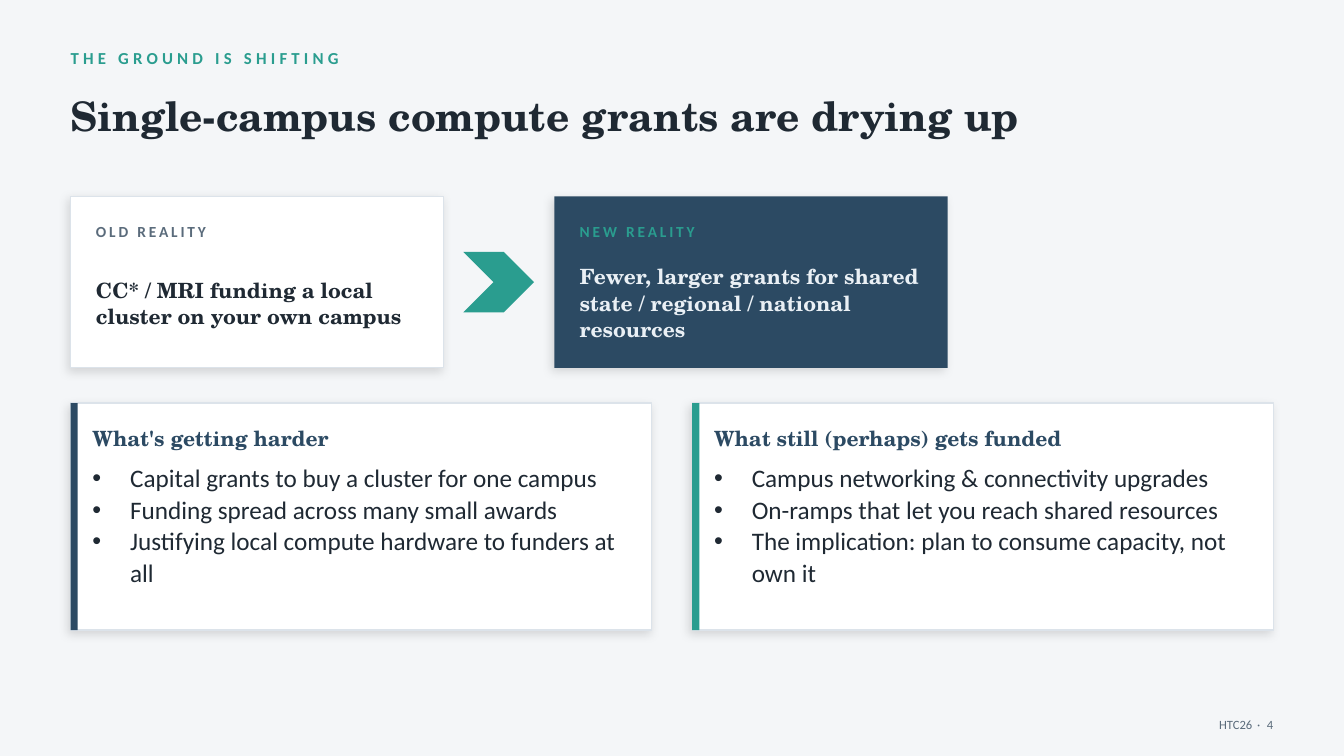
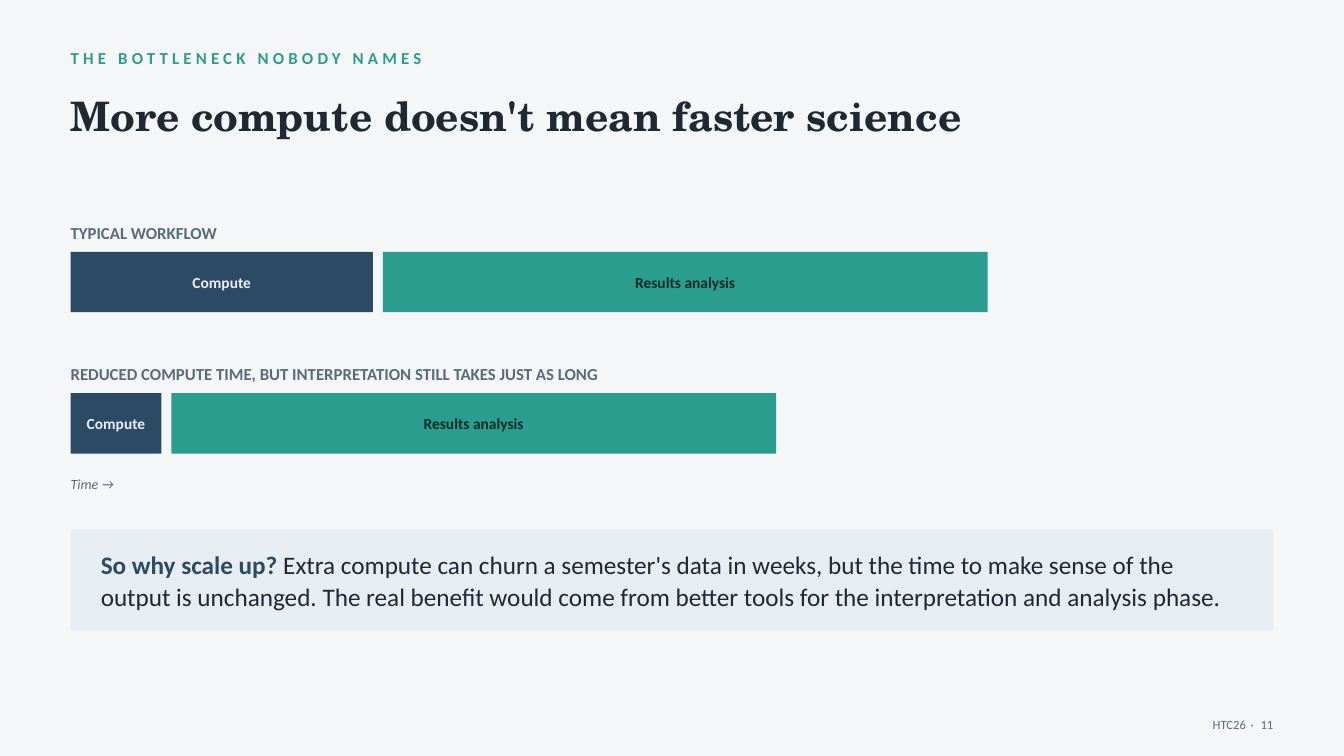
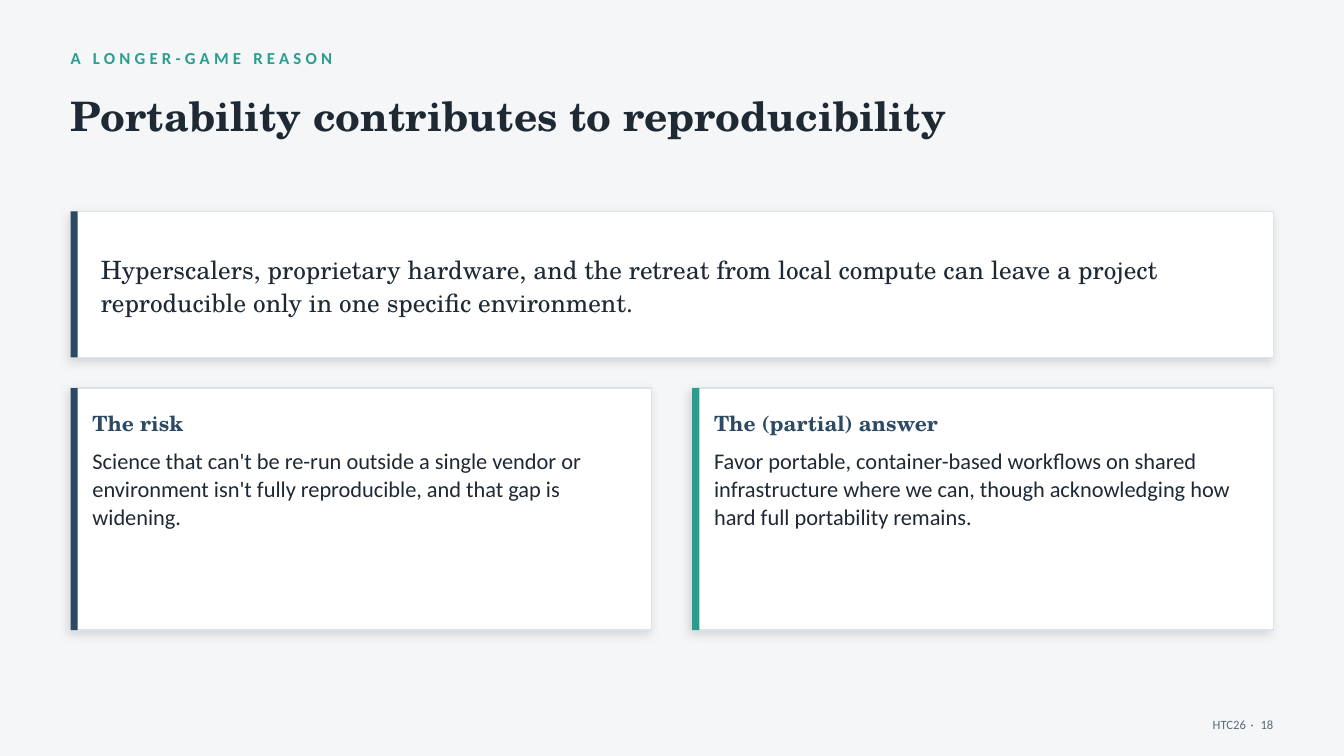
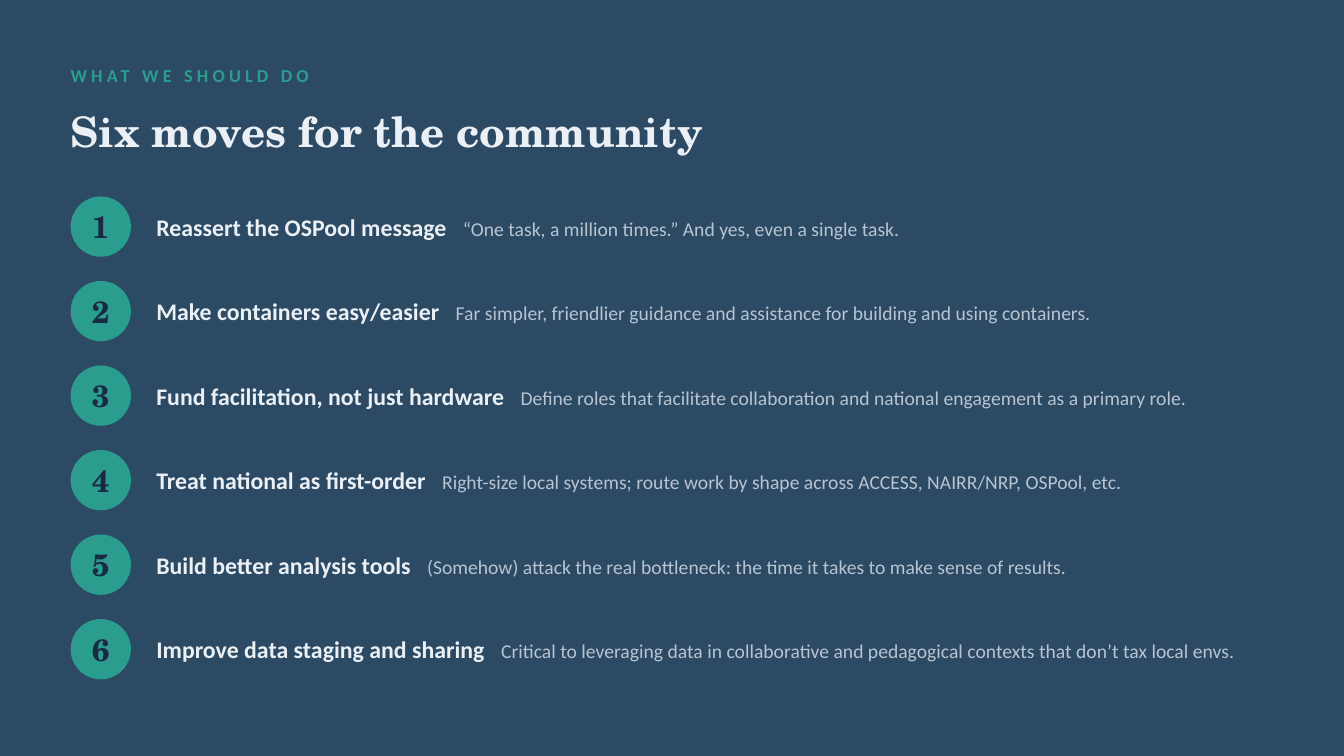
from lxml import etree
from pptx import Presentation
from pptx.dml.color import RGBColor
from pptx.enum.shapes import MSO_SHAPE
from pptx.enum.text import MSO_ANCHOR, MSO_AUTO_SIZE, PP_ALIGN
from pptx.oxml.ns import qn
from pptx.util import Cm, Pt

RECT, CHEVRON, OVAL = MSO_SHAPE.RECTANGLE, MSO_SHAPE.CHEVRON, MSO_SHAPE.OVAL
LEFT, CENTER, RIGHT = PP_ALIGN.LEFT, PP_ALIGN.CENTER, PP_ALIGN.RIGHT
TOP, MIDDLE = MSO_ANCHOR.TOP, MSO_ANCHOR.MIDDLE
NO_FIT = MSO_AUTO_SIZE.NONE

# Shared look
SANS, SERIF = "Calibri", "TeX Gyre Schola"
PAPER, WHITE, BORDER, MIST = "F4F6F8", "FFFFFF", "DCE3EA", "E7EDF2"
NAVY, TEAL, INK, SLATE = "2C4A63", "2A9D8F", "1F2933", "5A6B7B"
PALE, SILVER, DEEP_TEAL, MIDNIGHT = "EAF0F5", "B7C4D2", "0C2B27", "1B2A41"
color = RGBColor.from_string

# Shared grid, in centimetres
MARGIN, CONTENT_WIDTH = 1.78, 30.31
CONTENT_RIGHT = MARGIN + CONTENT_WIDTH
ACCENT_WIDTH, BAR_HEIGHT = 0.18, 1.52


def add_box(slide, kind, left, top, width, height, fill=None, card=False):
    """Add a flat shape, or a text box when kind is None."""
    area = Cm(left), Cm(top), Cm(width), Cm(height)
    if kind is None:
        return slide.shapes.add_textbox(*area)
    box = slide.shapes.add_shape(kind, *area)
    box.fill.solid()
    box.fill.fore_color.rgb = color(fill)
    box.line.fill.background()
    box.shadow.inherit = False
    if card:
        if fill == WHITE:
            box.line.color.rgb = color(BORDER)
            box.line.width = Pt(1)
        effects = box.element.spPr.find(qn("a:effectLst"))
        shadow = etree.SubElement(effects, qn("a:outerShdw"), blurRad="88900",
                                  dist="38100", dir="8100000",
                                  algn="bl", rotWithShape="0")
        black = etree.SubElement(shadow, qn("a:srgbClr"), val="000000")
        etree.SubElement(black, qn("a:alpha"), val="12000")
    return box


def write(box, text, size, ink, font=SANS, bold=False, tracking=0, align=LEFT,
          anchor=MIDDLE, leading=None, side=0, more=()):
    """Set the text; more holds (text, size, ink, bold, tracking) runs."""
    frame = box.text_frame
    frame.text = text
    frame.word_wrap = True
    frame.auto_size = NO_FIT
    frame.vertical_anchor = anchor
    frame.margin_left = frame.margin_right = Cm(side)
    frame.margin_top = frame.margin_bottom = 0
    looks = [(run, size, ink, bold, tracking)
             for paragraph in frame.paragraphs for run in paragraph.runs]
    for extra, *look in more:
        run = frame.paragraphs[-1].add_run()
        run.text = extra
        looks.append((run, *look))
    for paragraph in frame.paragraphs:
        paragraph.alignment = align
        paragraph.space_before = Pt(0)
        if leading:
            paragraph.line_spacing = leading
    for run, run_size, run_ink, run_bold, run_tracking in looks:
        run.font.name = font
        run.font.size = Pt(run_size)
        run.font.bold = run_bold
        run.font.color.rgb = color(run_ink)
        if run_tracking:
            run.font._element.set("spc", str(round(run_tracking * 100)))


prs = Presentation()
prs.slide_width, prs.slide_height = Cm(33.87), Cm(19.05)
two_content, title_only = prs.slide_layouts[3], prs.slide_layouts[5]

# Background and title place, set on the master
master = prs.slide_master
master.background.fill.solid()
master.background.fill.fore_color.rgb = color(PAPER)
master_title = master.placeholders[0]
master_title.left, master_title.top = Cm(MARGIN), Cm(1.83)
master_title.width, master_title.height = Cm(CONTENT_WIDTH), Cm(2.16)

# Kicker, title and footer of the light slides
light_slides = []
for layout, kicker, title, page in [
    (two_content, "THE GROUND IS SHIFTING",
     "Single-campus compute grants are drying up", "4"),
    (title_only, "THE BOTTLENECK NOBODY NAMES",
     "More compute doesn't mean faster science", "11"),
    (two_content, "A LONGER-GAME REASON",
     "Portability contributes to reproducibility", "18"),
]:
    slide = prs.slides.add_slide(layout)
    light_slides.append(slide)
    write(add_box(slide, None, MARGIN, 1.07, CONTENT_WIDTH, 0.76),
          kicker, 12, TEAL, bold=True, tracking=3)
    write(slide.shapes.title, title, 29, INK, SERIF, bold=True)
    write(add_box(slide, None, CONTENT_RIGHT - 6.35, 17.88, 6.35, 0.76),
          "HTC26", 9, SLATE, align=RIGHT,
          more=[(" · ", 9, SLATE, False, 1.35), (page, 9, SLATE, False, 0)])
funding, bottleneck, portability = light_slides

# Funding: old and new reality
for left, width, fill, label, label_ink, reality, ink in [
    (MARGIN, 9.4, WHITE, "OLD REALITY", SLATE,
     "CC* / MRI funding a local cluster on your own campus", INK),
    (13.97, 9.91, NAVY, "NEW REALITY", TEAL,
     "Fewer, larger grants for shared state / regional / national resources",
     PALE),
]:
    add_box(funding, RECT, left, 4.95, width, 4.32, fill, card=True)
    write(add_box(funding, None, left + 0.64, 5.46, width - 1.27, 0.76),
          label, 11, label_ink, bold=True, tracking=2)
    write(add_box(funding, None, left + 0.64, 6.35, width - 1.14, 2.54),
          reality, 15, ink, SERIF, bold=True, leading=1.05)
add_box(funding, CHEVRON, 11.68, 6.35, 1.78, BAR_HEIGHT, TEAL)

# Portability: statement across the slide
statement = add_box(portability, RECT, MARGIN, 5.33, CONTENT_WIDTH, 3.68,
                    WHITE, card=True)
write(statement, "Hyperscalers, proprietary hardware, and the retreat from local "
      "compute can leave a project reproducible only in one specific environment.",
      18, INK, SERIF, leading=1.1, side=0.76)
add_box(portability, RECT, MARGIN, 5.33, ACCENT_WIDTH, 3.68, NAVY)

# Funding and portability: pairs of cards with an accent edge
CARD_GAP, CARD_BOTTOM = 1.02, 15.88
card_width = (CONTENT_WIDTH - CARD_GAP) / 2
for slide, top, size, bulleted, cards in [
    (funding, 10.16, 18, True, [
        ("What's getting harder",
         "Capital grants to buy a cluster for one campus\n"
         "Funding spread across many small awards\n"
         "Justifying local compute hardware to funders at all"),
        ("What still (perhaps) gets funded",
         "Campus networking & connectivity upgrades\n"
         "On-ramps that let you reach shared resources\n"
         "The implication: plan to consume capacity, not own it")]),
    (portability, 9.78, 16, False, [
        ("The risk",
         "Science that can't be re-run outside a single vendor or environment "
         "isn't fully reproducible, and that gap is widening."),
        ("The (partial) answer",
         "Favor portable, container-based workflows on shared infrastructure "
         "where we can, though acknowledging how hard full portability "
         "remains.")]),
]:
    height = CARD_BOTTOM - top
    for column, (heading, details) in enumerate(cards):
        left = MARGIN + column * (card_width + CARD_GAP)
        add_box(slide, RECT, left, top, card_width, height, WHITE, card=True)
        add_box(slide, RECT, left, top, ACCENT_WIDTH, height,
                (NAVY, TEAL)[column])
        write(add_box(slide, None, left + 0.55, top + 0.46, 13.64, 0.86),
              heading, 15, NAVY, SERIF, bold=True)
        body = slide.placeholders[column + 1]
        body.left, body.top = Cm(left + 0.55), Cm(top + 1.47)
        body.width, body.height = Cm(13.64), Cm(height - 1.78)
        body.element.getparent().append(body.element)  # in front of its card
        write(body, details, size, INK, anchor=TOP, leading=1.04)
        indent = Cm(0.95) if bulleted else 0
        for paragraph in body.text_frame.paragraphs:
            properties = paragraph._p.get_or_add_pPr()
            properties.set("marL", str(indent))
            properties.set("indent", str(-indent))
            if not bulleted:
                etree.SubElement(properties, qn("a:buNone"))

# Bottleneck: two workflows on one time scale
for row, (workflow, compute_width) in enumerate([
    ("TYPICAL WORKFLOW", 7.62),
    ("REDUCED COMPUTE TIME, BUT INTERPRETATION STILL TAKES JUST AS LONG", 2.29),
]):
    top = 6.35 + row * 3.56
    write(add_box(bottleneck, None, MARGIN, top - 0.86, 15.24, 0.76),
          workflow, 12, SLATE, bold=True)
    compute = add_box(bottleneck, RECT, MARGIN, top, compute_width, BAR_HEIGHT,
                      NAVY)
    write(compute, "Compute", 11, PALE, bold=True, align=CENTER)
    analysis = add_box(bottleneck, RECT, MARGIN + compute_width + 0.25, top,
                       15.24, BAR_HEIGHT, TEAL)
    write(analysis, "Results analysis", 11, DEEP_TEAL, bold=True, align=CENTER)
time_axis = add_box(bottleneck, None, MARGIN, 11.81, 10.16, 0.76)
write(time_axis, "Time →", 10, SLATE)
time_axis.text_frame.paragraphs[0].runs[0].font.italic = True

# Bottleneck: takeaway
takeaway = add_box(bottleneck, RECT, MARGIN, 13.34, CONTENT_WIDTH, 2.54, MIST)
write(takeaway, "So why scale up? ", 18, NAVY, bold=True, leading=1.05, side=0.76,
      more=[("Extra compute can churn a semester's data in weeks, but the time to "
             "make sense of the output is unchanged. The real benefit would come "
             "from better tools for the interpretation and analysis phase.",
             18, INK, False, 0)])

# Moves: dark slide with its own heading
moves = prs.slides.add_slide(title_only)
moves.background.fill.solid()
moves.background.fill.fore_color.rgb = color(NAVY)
write(add_box(moves, None, MARGIN, 1.52, CONTENT_WIDTH, 0.76),
      "WHAT WE SHOULD DO", 13, TEAL, bold=True, tracking=3)
moves_title = moves.shapes.title
moves_title.left, moves_title.top = Cm(MARGIN), Cm(2.41)
moves_title.width, moves_title.height = Cm(CONTENT_WIDTH), Cm(1.78)
write(moves_title, "Six moves for the community", 30, PALE, SERIF, bold=True)

# Moves: numbered rows
for row, (move, reason) in enumerate([
    ("Reassert the OSPool message",
     "“One task, a million times.” And yes, even a single task."),
    ("Make containers easy/easier",
     "Far simpler, friendlier guidance and assistance for building and using "
     "containers."),
    ("Fund facilitation, not just hardware",
     "Define roles that facilitate collaboration and national engagement as a "
     "primary role."),
    ("Treat national as first-order",
     "Right-size local systems; route work by shape across ACCESS, NAIRR/NRP, "
     "OSPool, etc."),
    ("Build better analysis tools",
     "(Somehow) attack the real bottleneck: the time it takes to make sense of "
     "results."),
    ("Improve data staging and sharing",
     "Critical to leveraging data in collaborative and pedagogical contexts that "
     "don’t tax local envs."),
]):
    top = 4.95 + row * 2.13
    number = add_box(moves, OVAL, MARGIN, top, BAR_HEIGHT, BAR_HEIGHT, TEAL)
    write(number, str(row + 1), 22, MIDNIGHT, SERIF, bold=True, align=CENTER)
    write(add_box(moves, None, 3.94, top, CONTENT_RIGHT - 3.94, BAR_HEIGHT),
          move, 17, PALE, bold=True,
          more=[(" ", 17, PALE, True, 7.7), (reason, 14, SILVER, False, 0)])

prs.save("out.pptx")
